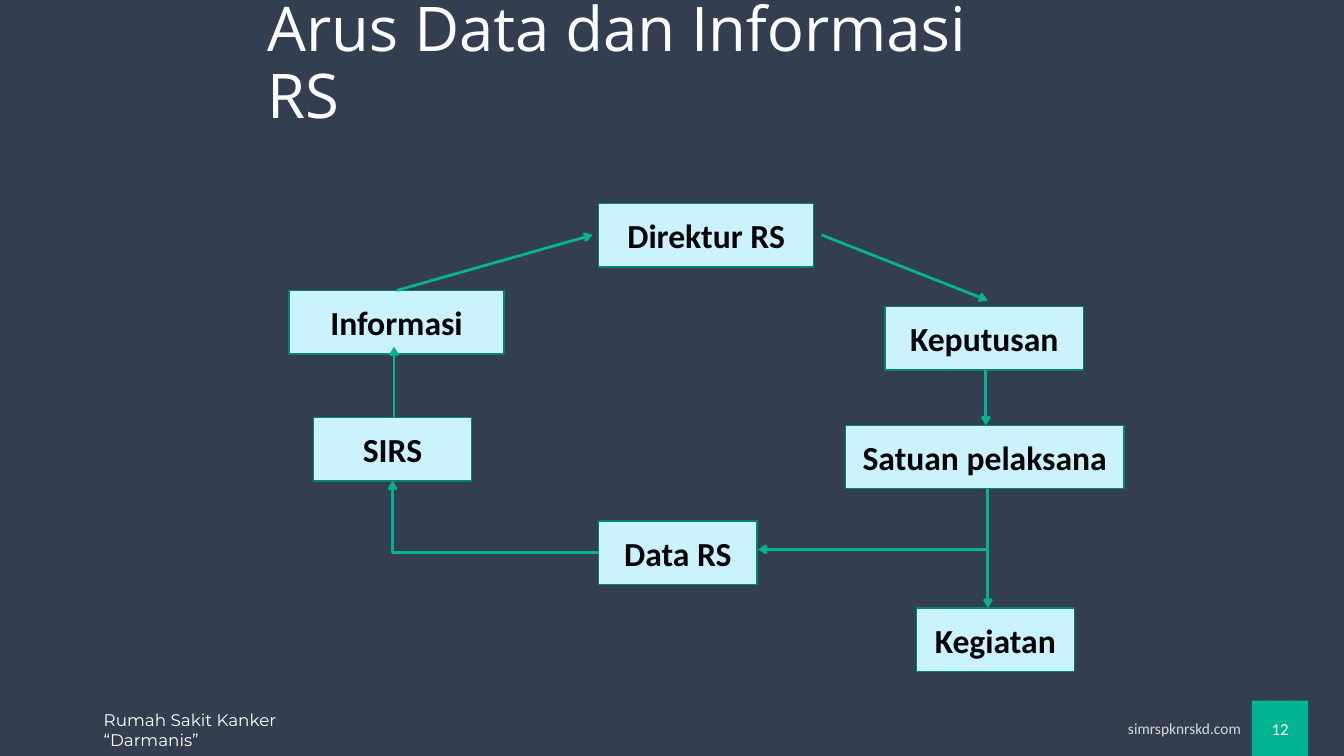
from lxml.etree import SubElement
from pptx import Presentation
from pptx.dml.color import RGBColor
from pptx.enum.shapes import MSO_CONNECTOR, MSO_SHAPE
from pptx.enum.text import MSO_ANCHOR, MSO_AUTO_SIZE, PP_ALIGN
from pptx.oxml.ns import qn
from pptx.util import Pt

NAVY = RGBColor(0x33, 0x3F, 0x50)
GREEN = RGBColor(0x00, 0xB3, 0x93)
DARK_GREEN = RGBColor(0x00, 0x84, 0x6D)
PALE_BLUE = RGBColor(0xCA, 0xF2, 0xFF)
GREY = RGBColor(0xD9, 0xD9, 0xD9)
WHITE = RGBColor(0xFF, 0xFF, 0xFF)
BLACK = RGBColor(0x00, 0x00, 0x00)

BOX_HEIGHT = 45.4
BOXES = [
    ("Direktur RS", 427.7, 145.4, 153.4),
    ("Keputusan", 632.2, 218.9, 141.8),
    ("Satuan pelaksana", 604.1, 303.8, 198.7),
    ("Data RS", 427.7, 372.2, 113),
    ("Kegiatan", 654.5, 434.2, 113),
    ("Informasi", 206.6, 207.4, 153.4),
    ("SIRS", 223.9, 298.1, 113),
]
ARROWS = [
    (704.2, 264.2, 704.2, 303.8),
    (705.6, 349.2, 705.6, 434.2),
    (705.6, 392.4, 541.4, 392.4),
    (281.5, 298.1, 281.5, 247.7),
    (283.7, 207.4, 423.4, 167.8),
    (586.8, 167.8, 705.6, 214.6),
]


def write(sp, text, font, size, color, align=PP_ALIGN.LEFT,
          anchor=MSO_ANCHOR.TOP, bold=False):
    """Put one formatted paragraph in a shape and return the paragraph."""
    tf = sp.text_frame
    tf.text = text
    tf.word_wrap = True
    tf.auto_size = MSO_AUTO_SIZE.NONE
    tf.vertical_anchor = anchor
    p = tf.paragraphs[0]
    p.alignment = align
    f = p.runs[0].font
    f.name, f.size, f.bold = font, Pt(size), bold
    f.color.rgb = color
    return p


def add_rect(slide, left, top, width, height, fill):
    """Add a flat filled rectangle without an outline."""
    sp = slide.shapes.add_shape(MSO_SHAPE.RECTANGLE, Pt(left), Pt(top),
                                Pt(width), Pt(height))
    sp.shadow.inherit = False
    sp.fill.solid()
    sp.fill.fore_color.rgb = fill
    sp.line.fill.background()
    return sp


def add_box(slide, label, left, top, width):
    """Add one labelled step of the flow."""
    sp = add_rect(slide, left, top, width, BOX_HEIGHT, PALE_BLUE)
    sp.line.color.rgb = DARK_GREEN
    sp.line.width = Pt(1)
    write(sp, label, "Calibri", 24, BLACK, PP_ALIGN.CENTER,
          MSO_ANCHOR.MIDDLE, True)


def add_arrow(slide, x1, y1, x2, y2, kind=MSO_CONNECTOR.STRAIGHT):
    """Add a green connector with an arrowhead at its end."""
    cx = slide.shapes.add_connector(kind, Pt(x1), Pt(y1), Pt(x2), Pt(y2))
    cx.line.color.rgb = GREEN
    cx.line.width = Pt(2)
    SubElement(cx.line._get_or_add_ln(), qn("a:tailEnd"), type="arrow")
    SubElement(cx._element.spPr, qn("a:effectLst"))
    return cx


def add_corner_arrow(slide, left, top, right, bottom):
    """Add an arrow that runs left along the bottom and then up."""
    cx = add_arrow(slide, left, top, right, bottom, MSO_CONNECTOR.ELBOW)
    spPr = cx._element.spPr
    spPr.find(qn("a:prstGeom")).set("prst", "bentConnector2")
    spPr.find(qn("a:xfrm")).set("rot", "10800000")


def add_text(slide, left, top, width, height, *style):
    """Add a text box and return its paragraph."""
    sp = slide.shapes.add_textbox(Pt(left), Pt(top), Pt(width), Pt(height))
    return write(sp, *style)


def add_title(slide, text):
    """Place and format the title placeholder."""
    sp = slide.shapes.title
    sp.left, sp.top, sp.width, sp.height = Pt(183.6), Pt(15.8), Pt(573), Pt(61.2)
    p = write(sp, text, "Open Sans", 44, WHITE, anchor=MSO_ANCHOR.MIDDLE)
    p.line_spacing = 0.9


def add_footer(slide):
    """Add the hospital name, the web address and the page number."""
    page = add_rect(slide, 894.2, 500.4, 40.3, 39.6, GREEN)
    write(page, "12", "Calibri", 12, WHITE, PP_ALIGN.CENTER, MSO_ANCHOR.MIDDLE)
    p = add_text(slide, 746.6, 511.9, 147, 16.6, "simrspknrskd.com",
                 "Calibri", 11, GREY, PP_ALIGN.RIGHT)
    p.line_spacing = 0.9
    add_text(slide, 67, 503.3, 190, 21.6, "Rumah Sakit Kanker “Darmanis”",
             "Montserrat", 12, WHITE)


def main():
    """Build and save the slide."""
    prs = Presentation()
    prs.slide_width, prs.slide_height = Pt(960), Pt(540)
    slide = prs.slides.add_slide(prs.slide_layouts[5])
    slide.background.fill.solid()
    slide.background.fill.fore_color.rgb = NAVY
    add_title(slide, "Arus Data dan Informasi RS")
    for box in BOXES:
        add_box(slide, *box)
    for arrow in ARROWS:
        add_arrow(slide, *arrow)
    add_corner_arrow(slide, 280.4, 343.4, 427.7, 394.6)
    add_footer(slide)
    prs.save("out.pptx")


if __name__ == "__main__":
    main()
